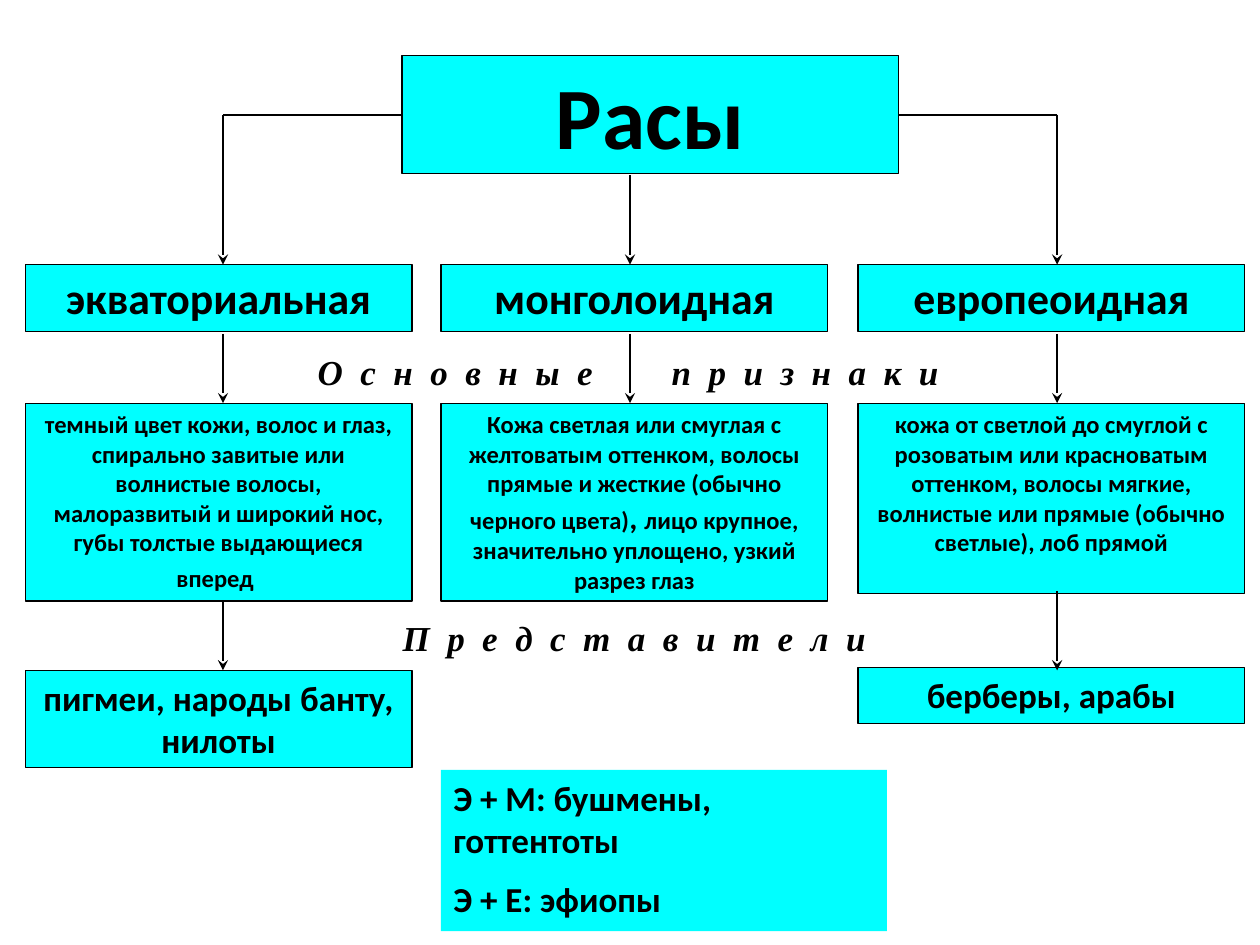
from lxml import etree
from pptx import Presentation
from pptx.dml.color import RGBColor
from pptx.enum import shapes, text
from pptx.oxml import ns
from pptx.util import Inches, Pt

COLORS = {"box": "00FFFF", "ink": "000000"}
INK = RGBColor.from_string(COLORS["ink"])
CENTER, LEFT = text.PP_ALIGN.CENTER, text.PP_ALIGN.LEFT
BODY = {"name": "Calibri", "bold": True}
CAPTION = {"name": "Times New Roman", "bold": True, "italic": True}

deck = Presentation()
deck.slide_width, deck.slide_height = Inches(10), Inches(7.5)
slide = deck.slides.add_slide(deck.slide_layouts[6])


def write(holder, paragraphs, font=BODY, align=CENTER):
    frame = holder.text_frame
    settings = {"word_wrap": True, "vertical_anchor": text.MSO_ANCHOR.TOP}
    for key, value in settings.items():
        setattr(frame, key, value)
    for index, pieces in enumerate(paragraphs):
        paragraph = frame.add_paragraph() if index else frame.paragraphs[0]
        paragraph.alignment = align
        paragraph.space_before = Pt(pieces[0][1] / 2)
        for words, size, *spacing in pieces:
            run = paragraph.add_run()
            run.text = words
            for key, value in {**font, "size": Pt(size)}.items():
                setattr(run.font, key, value)
            run.font.color.rgb = INK
            if spacing:
                run.font._element.set("spc", str(int(spacing[0] * 100)))


def arrow(start, end, width, head=True):
    line = slide.shapes.add_connector(
        shapes.MSO_CONNECTOR.STRAIGHT, *map(Inches, start + end))
    line.line.width = Pt(width)
    line.line.color.rgb = INK
    if head:
        etree.SubElement(line.line._get_or_add_ln(), ns.qn("a:tailEnd"), type="stealth")
    etree.SubElement(line._element.spPr, ns.qn("a:effectLst"))
    return line


column_lefts = [0.2, 3.5, 6.81]
arrow_xs = [1.77, 5, 8.39]
column_width = 3.07
title_middle = 0.91
race_top = 2.1

races = ["экваториальная", "монголоидная", "европеоидная"]
traits = [
    (1.57, [("темный цвет кожи, волос и глаз, спирально завитые или волнистые волосы, "
             "малоразвитый и широкий нос, губы толстые выдающиеся вперед", 14), (" ", 18)]),
    (1.57, [("Кожа светлая или смуглая с желтоватым оттенком, волосы прямые и жесткие "
             "(обычно черного цвета)", 14), (", ", 18),
            ("лицо крупное, значительно уплощено, узкий разрез глаз", 14)]),
    (1.51, [("кожа от светлой до смуглой с розоватым или красноватым оттенком, волосы "
             "мягкие, волнистые или прямые (обычно светлые), лоб прямой", 14)]),
]

boxes = [(3.19, 0.44, 3.94, 0.94, [[("Расы", 50)]], True)]
for left, race, (height, pieces) in zip(column_lefts, races, traits):
    boxes.append((left, race_top, column_width, 0.53, [[(race, 25)]], True))
    boxes.append((left, 3.2, column_width, height, [pieces], True))
boxes += [
    (column_lefts[0], 5.32, column_width, 0.77, [[("пигмеи, народы банту, нилоты", 20)]], True),
    (column_lefts[2], 5.3, column_width, 0.44, [[("берберы, арабы", 20)]], True),
    (column_lefts[1], 6.11, 3.54, 1.28,
     [[("Э + М: бушмены, готтентоты", 20)], [("Э + Е: эфиопы", 20)]], False),
]

drawn_boxes = []
for left, top, width, height, paragraphs, outlined in boxes:
    box = slide.shapes.add_shape(
        shapes.MSO_SHAPE.RECTANGLE, *map(Inches, (left, top, width, height)))
    box.shadow.inherit = False
    box.fill.solid()
    box.fill.fore_color.rgb = RGBColor.from_string(COLORS["box"])
    if outlined:
        box.line.color.rgb = INK
        box.line.width = Pt(0.75)
    else:
        box.line.fill.background()
    write(box, paragraphs, align=CENTER if outlined else LEFT)
    drawn_boxes.append(box)
title = drawn_boxes[0]

captions = [
    (0.38, 2.73, [("О с н о в н ы е", 20, 2.5), (" ", 20, 37.5), ("п р и з н а к и", 20, 2.5)]),
    (0.43, 4.84, [("П р е д с т а в и т е л и", 20, 2.5)]),
]
for left, top, pieces in captions:
    caption = slide.shapes.add_textbox(*map(Inches, (left, top, 9.21, 0.43)))
    write(caption, [pieces], CAPTION)

for x, start in zip(arrow_xs, [title_middle, 1.39, title_middle]):
    arrow((x, start), (x, race_top), 1.25)
    arrow((x, 2.65), (x, 3.2), 0.75)
for x, start in [(arrow_xs[0], 4.77), (arrow_xs[2], 4.69)]:
    arrow((x, start), (x, 5.32), 0.75)
for x, title_edge, side in [(arrow_xs[0], 3.19, 1), (arrow_xs[2], 7.13, 3)]:
    branch = arrow((title_edge, title_middle), (x, title_middle), 1.25, head=False)
    branch.begin_connect(title, side)
    branch.end_y = branch.begin_y

deck.save("out.pptx")
